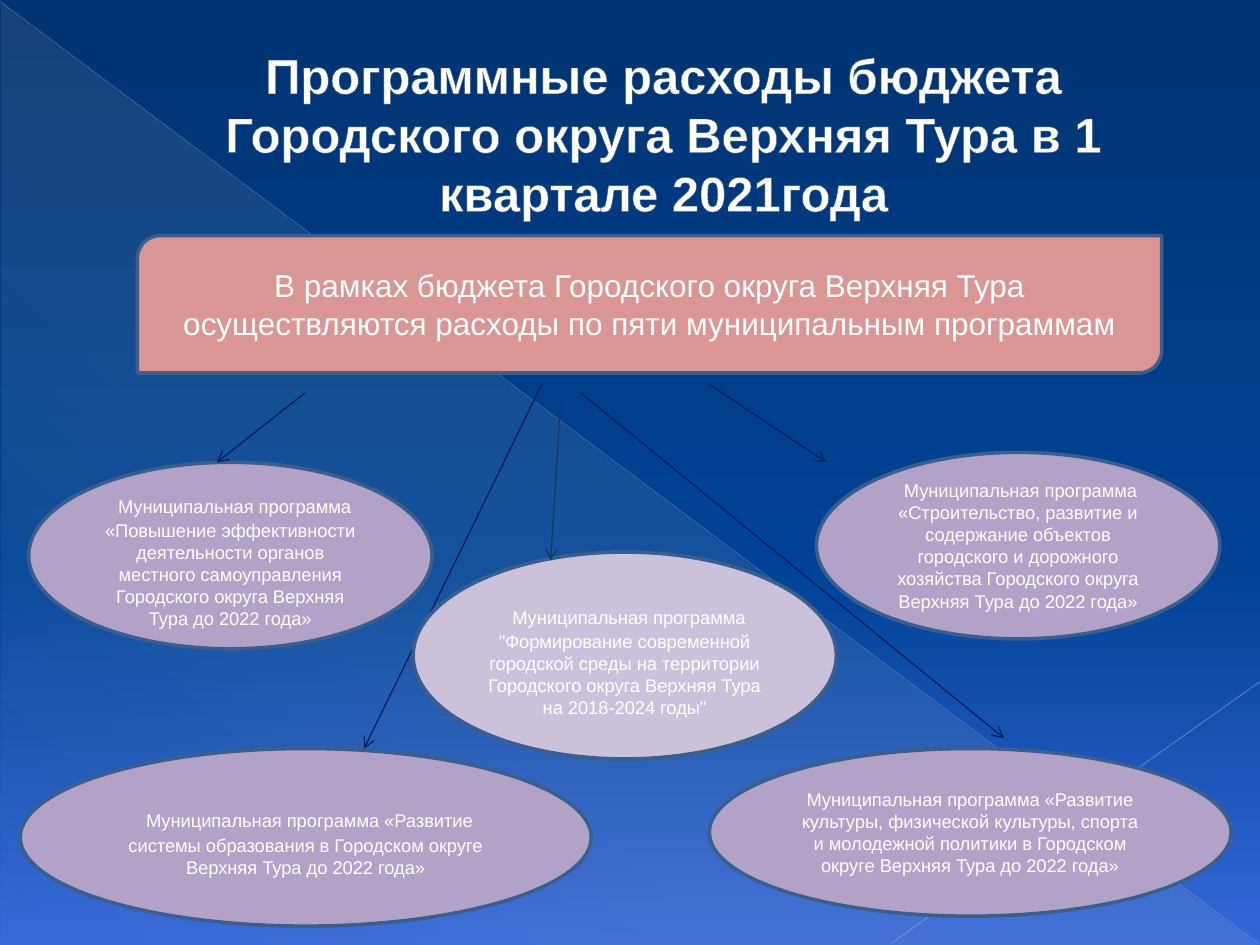
from lxml import etree
from pptx import Presentation
from pptx.dml.color import RGBColor
from pptx.enum.shapes import MSO_CONNECTOR, MSO_SHAPE
from pptx.enum.text import MSO_ANCHOR, PP_ALIGN
from pptx.oxml.ns import qn
from pptx.util import Cm, Pt

OVAL = MSO_SHAPE.OVAL
BANNER = MSO_SHAPE.ROUND_2_DIAG_RECTANGLE
WEDGE = MSO_SHAPE.RIGHT_TRIANGLE
LINE = MSO_CONNECTOR.STRAIGHT
MIDDLE = MSO_ANCHOR.MIDDLE
CENTER = PP_ALIGN.CENTER

COLORS = {
    "white": "FFFFFF", "rose": "D99694", "violet": "B3A2C7", "lilac": "CCC1DA",
    "edge": "3A5F8C", "navy": "002060", "slate": "17375E", "rim": "375983",
    "cream": "EEECE1", "ray": "ADB6CE", "beam": "B6BED3",
    "top": "003371", "mid": "004396", "base": "3566D7",
}
SKY = [(0, "top", 100), (60, "mid", 100), (100, "base", 100)]
GLOW = [(0, "cream", 10), (70, "cream", 8), (100, "cream", 1)]

TITLE = "Программные расходы бюджета Городского округа Верхняя Тура в 1 квартале 2021года"
INTRO = ("В рамках бюджета Городского округа Верхняя Тура "
         "осуществляются расходы по пяти муниципальным программам")

# box, fill, (size, font) of the leading space or None, program name
PROGRAMS = [
    ((0.58, 9.32, 8.13, 3.76), "violet", (18, "Arial"),
     "«Повышение эффективности деятельности органов местного самоуправления "
     "Городского округа Верхняя Тура до 2022 года»"),
    ((16.46, 9.12, 8.13, 3.76), "violet", (10.5, "TeX Gyre Adventor"),
     "«Строительство, развитие и содержание объектов городского и дорожного "
     "хозяйства Городского округа Верхняя Тура до 2022 года»"),
    ((14.3, 15.09, 10.52, 3.38), "violet", None,
     "«Развитие культуры, физической культуры, спорта и молодежной политики "
     "в Городском округе Верхняя Тура до 2022 года»"),
    ((0.41, 15.09, 11.51, 3.58), "violet", (18, "Times New Roman"),
     "«Развитие системы образования в Городском округе Верхняя Тура до 2022 года»"),
    ((8.33, 11.13, 8.53, 4.17), "lilac", (18, "Arial"),
     '"Формирование современной городской среды на территории '
     'Городского округа Верхняя Тура на 2018-2024 годы"'),
]
ARROWS = [
    (6.15, 7.92, 4.37, 9.32),
    (10.92, 7.75, 7.34, 15.09),
    (11.71, 7.92, 20.24, 14.88),
    (14.3, 7.75, 16.66, 9.32),
]
SHORT = (11.3, 8.13, 11.1, 11.3)


def rgb(name):
    return RGBColor.from_string(COLORS[name])


def sub(parent, tag, **attrs):
    return etree.SubElement(parent, qn(tag), attrs)


def fade(fill, node, stops, angle):
    """Give fill, which lies inside node, gradient stops (place, color, opacity)."""
    fill.gradient()
    grad = node.find(".//" + qn("a:gradFill"))
    grad.find(qn("a:lin")).set("ang", str(angle * 60000))
    items = grad.find(qn("a:gsLst"))
    for old in list(items):
        items.remove(old)
    for place, color, alpha in stops:
        stop = sub(items, "a:gs", pos=str(place * 1000))
        tint = sub(stop, "a:srgbClr", val=COLORS[color])
        if alpha < 100:
            sub(tint, "a:alpha", val=str(alpha * 1000))


def write(frame, runs):
    """Put runs of (text, size, font) in one centred paragraph."""
    for key, value in {"word_wrap": True, "vertical_anchor": MIDDLE}.items():
        setattr(frame, key, value)
    para = frame.paragraphs[0]
    para.alignment = CENTER
    for text, size, font in runs:
        run = para.add_run()
        run.text = text
        for key, value in {"size": Pt(size), "name": font}.items():
            setattr(run.font, key, value)
        run.font.color.rgb = rgb("white")
    return para


def add_shape(slide, kind, box, color, runs):
    shape = slide.shapes.add_shape(kind, *map(Cm, box))
    shape.shadow.inherit = False
    shape.fill.solid()
    shape.fill.fore_color.rgb = rgb(color)
    shape.line.color.rgb = rgb("edge")
    shape.line.width = Pt(2)
    write(shape.text_frame, runs)


def add_line(slide, ends, color, width, alpha=100, arrow=False):
    line = slide.shapes.add_connector(LINE, *map(Cm, ends))
    line.line.color.rgb = rgb(color)
    line.line.width = Pt(width)
    props = line._element.spPr
    if alpha < 100:
        tint = props.find(".//" + qn("a:srgbClr"))
        sub(tint, "a:alpha", val=str(alpha * 1000))
    if arrow:
        sub(props.find(qn("a:ln")), "a:tailEnd", type="arrow")
    sub(props, "a:effectLst")


def add_back(slide):
    fade(slide.background.fill, slide._element, SKY, 90)
    wedge = slide.shapes.add_shape(WEDGE, *map(Cm, (0.03, 0.05, 25.35, 19)))
    wedge.shadow.inherit = False
    wedge.line.fill.background()
    fade(wedge.fill, wedge._element, GLOW, 133)
    add_line(slide, (0, 0.03, 25.37, 19.02), "ray", 0.39, 35)
    add_line(slide, (25.4, 13.74, 17.96, 19.02), "beam", 0.47, 45)


def add_title(slide):
    box = slide.shapes.add_textbox(*map(Cm, (1.27, 0.74, 22.86, 3.89)))
    para = write(box.text_frame, [(TITLE, 28, "Arial")])
    para._p.get_or_add_pPr().set("marL", str(Cm(1.35)))
    font = para.runs[0].font
    font.bold = True
    rim = etree.Element(qn("a:ln"), w=str(Pt(0.5)))
    sub(sub(rim, "a:solidFill"), "a:srgbClr", val=COLORS["rim"])
    para.runs[0]._r.get_or_add_rPr().insert(0, rim)


def add_program(slide, box, color, lead, name):
    runs = [(" ", *lead)] if lead else []
    runs.append(("Муниципальная программа " + name, 10.5, "Arial"))
    add_shape(slide, OVAL, box, color, runs)


def main():
    deck = Presentation()
    deck.slide_width, deck.slide_height = Cm(25.4), Cm(19.05)
    slide = deck.slides.add_slide(deck.slide_layouts[6])
    add_back(slide)
    add_title(slide)
    add_shape(slide, BANNER, (2.77, 4.75, 20.65, 2.77), "rose", [(INTRO, 18, "Arial")])
    for program in PROGRAMS[:-1]:
        add_program(slide, *program)
    for ends in ARROWS:
        add_line(slide, ends, "navy", 0.75, arrow=True)
    add_program(slide, *PROGRAMS[-1])
    add_line(slide, SHORT, "slate", 0.75, arrow=True)
    deck.save("out.pptx")


if __name__ == "__main__":
    main()
